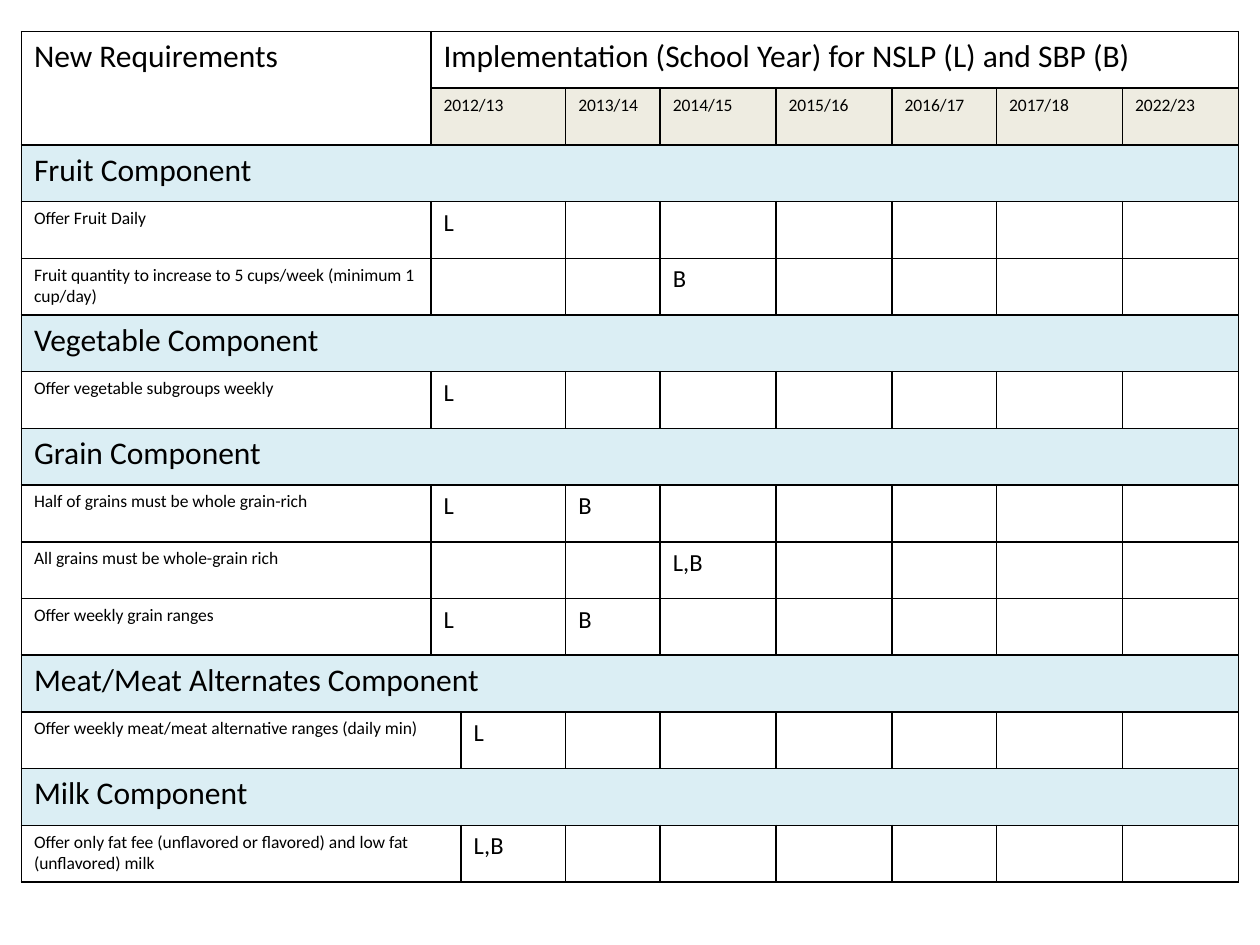
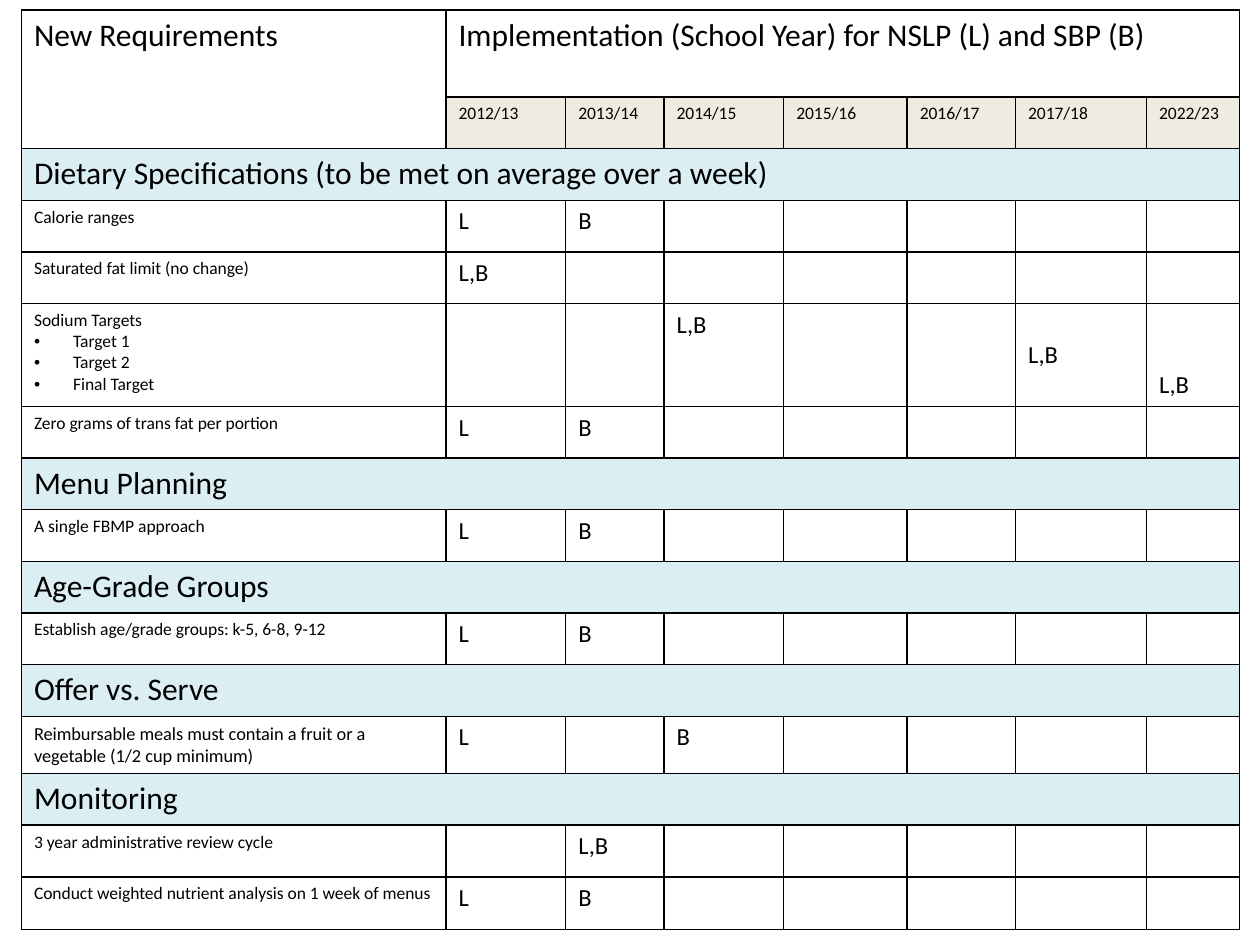
from dataclasses import dataclass, field

from lxml.etree import SubElement
from pptx import Presentation
from pptx.dml.color import RGBColor
from pptx.oxml.ns import qn
from pptx.util import Inches, Pt


@dataclass(frozen=True)
class Theme:
    font: str = "Calibri"
    ink: str = "000000"
    paper: str = "FFFFFF"
    year_fill: str = "EEECE1"
    section_fill: str = "DBEEF4"
    heading_size: float = 18
    mark_size: float = 14
    body_size: float = 10
    wide_body_size: float = 10.5
    border_width: float = 1
    cell_margin: float = 0.05
    mark_line: float = 0.24
    bullet_indent: float = 0.31


@dataclass(frozen=True)
class Section:
    title: str
    height: float


@dataclass(frozen=True)
class Requirement:
    label: str
    height: float
    marks: dict
    targets: tuple = ()
    mark_lines: dict = field(default_factory=dict)
    size: float = Theme.body_size
    wide_label: bool = False


YEARS = ("2012/13", "2013/14", "2014/15", "2015/16", "2016/17", "2017/18", "2022/23")
LUNCH_FIRST = {"2012/13": "L"}
LUNCH_THEN_BREAKFAST = {"2012/13": "L", "2013/14": "B"}


def write_text(text_frame, text, *, size, theme, bulleted=False, added=False):
    paragraph = text_frame.add_paragraph() if added else text_frame.paragraphs[0]
    run = paragraph.add_run()
    run.text = text
    run.font.name = theme.font
    run.font.size = Pt(size)
    run.font.color.rgb = RGBColor.from_string(theme.ink)
    if bulleted:
        properties = paragraph._p.get_or_add_pPr()
        indent = Inches(theme.bullet_indent)
        properties.set("marL", str(indent))
        properties.set("indent", str(-indent))
        SubElement(properties, qn("a:buFont")).set("typeface", "Arial")
        SubElement(properties, qn("a:buChar")).set("char", "•")


class TimelineDeck:
    def __init__(self, theme):
        self.theme = theme
        self.presentation = Presentation()
        self.presentation.slide_width = Inches(10)
        self.presentation.slide_height = Inches(7.5)
        self.slide = None
        self.table = None

    def add_slide(self):
        self.slide = self.presentation.slides.add_slide(self.presentation.slide_layouts[6])
        background = self.slide.background.fill
        background.solid()
        background.fore_color.rgb = RGBColor.from_string(self.theme.paper)

    def add_grid(self, left, top, widths, heights):
        shape = self.slide.shapes.add_table(
            len(heights), len(widths), Inches(left), Inches(top),
            Inches(sum(widths)), Inches(sum(heights)))
        self.table = shape.table
        self.table.first_row = False
        self.table.horz_banding = False
        for column, width in zip(self.table.columns, widths):
            column.width = Inches(width)
        for row, height in zip(self.table.rows, heights):
            row.height = Inches(height)
        for cell in self.table.iter_cells():
            self.add_borders(cell)
            cell.fill.background()

    def add_borders(self, cell):
        properties = cell._tc.get_or_add_tcPr()
        for side in ("lnL", "lnR", "lnT", "lnB"):
            line = SubElement(properties, qn(f"a:{side}"), w=str(Pt(self.theme.border_width)))
            fill = SubElement(line, qn("a:solidFill"))
            SubElement(fill, qn("a:srgbClr"), val=self.theme.ink)

    def fill_cell(self, row, column, text="", *, size, fill=None, until=None, line=0):
        cell = self.table.cell(row, column)
        if until and until != (row, column):
            cell.merge(self.table.cell(*until))
        if fill:
            cell.fill.solid()
            cell.fill.fore_color.rgb = RGBColor.from_string(fill)
        if line:
            cell.margin_top = Inches(self.theme.cell_margin + line * self.theme.mark_line)
        if text:
            write_text(cell.text_frame, text, size=size, theme=self.theme)
        return cell

    def add_header(self, last_column, first_year, year_columns):
        theme = self.theme
        self.fill_cell(0, 0, "New Requirements", size=theme.heading_size, until=(1, 0))
        self.fill_cell(0, 1, "Implementation (School Year) for NSLP (L) and SBP (B)",
                       size=theme.heading_size, until=(0, last_column))
        for year, column in year_columns.items():
            start = 1 if year == first_year else column
            self.fill_cell(1, start, year, size=theme.body_size,
                           fill=theme.year_fill, until=(1, column))

    def add_section(self, row, section, last_column):
        self.fill_cell(row, 0, section.title, size=self.theme.heading_size,
                       fill=self.theme.section_fill, until=(row, last_column))

    def add_requirement(self, row, requirement, first_year, year_columns):
        theme = self.theme
        first_column = year_columns[first_year]
        label_end = first_column - 1 if requirement.wide_label else 0
        label = self.fill_cell(row, 0, requirement.label, size=requirement.size,
                               until=(row, label_end))
        for target in requirement.targets:
            write_text(label.text_frame, target, size=requirement.size, theme=theme,
                       bulleted=True, added=True)
        for year, column in year_columns.items():
            start = label_end + 1 if year == first_year else column
            self.fill_cell(row, start, requirement.marks.get(year, ""), size=theme.mark_size,
                           until=(row, column), line=requirement.mark_lines.get(year, 0))

    def add_timeline(self, left, top, widths, header_heights, entries):
        self.add_slide()
        heights = [*header_heights, *(entry.height for entry in entries)]
        self.add_grid(left, top, widths, heights)
        last_column = len(widths) - 1
        first_year = YEARS[0]
        year_columns = dict(zip(YEARS, range(len(widths) - len(YEARS), len(widths))))
        self.add_header(last_column, first_year, year_columns)
        for row, entry in enumerate(entries, start=len(header_heights)):
            if isinstance(entry, Section):
                self.add_section(row, entry, last_column)
            else:
                self.add_requirement(row, entry, first_year, year_columns)

    def save(self):
        self.presentation.save("out.pptx")


def meal_components():
    height = 0.45
    return [
        Section("Fruit Component", height),
        Requirement("Offer Fruit Daily", height, LUNCH_FIRST),
        Requirement("Fruit quantity to increase to 5 cups/week (minimum 1 cup/day)",
                    height, {"2014/15": "B"}),
        Section("Vegetable Component", height),
        Requirement("Offer vegetable subgroups weekly", height, LUNCH_FIRST),
        Section("Grain Component", height),
        Requirement("Half of grains must be whole grain-rich", height, LUNCH_THEN_BREAKFAST),
        Requirement("All grains must be whole-grain rich", height, {"2014/15": "L,B"}),
        Requirement("Offer weekly grain ranges", height, LUNCH_THEN_BREAKFAST),
        Section("Meat/Meat Alternates Component", height),
        Requirement("Offer weekly meat/meat alternative ranges (daily min)",
                    height, LUNCH_FIRST, wide_label=True),
        Section("Milk Component", height),
        Requirement("Offer only fat fee (unflavored or flavored) and low fat (unflavored) milk",
                    height, {"2012/13": "L,B"}, wide_label=True),
    ]


def program_rules():
    height = 0.41
    return [
        Section("Dietary Specifications (to be met on average over a week)", height),
        Requirement("Calorie ranges", height, LUNCH_THEN_BREAKFAST),
        Requirement("Saturated fat limit (no change)", height, {"2012/13": "L,B"}),
        Requirement("Sodium Targets", 0.79,
                    dict.fromkeys(("2014/15", "2017/18", "2022/23"), "L,B"),
                    targets=("Target 1", "Target 2", "Final Target"),
                    mark_lines={"2017/18": 1, "2022/23": 2}),
        Requirement("Zero grams of trans fat per portion", height, LUNCH_THEN_BREAKFAST),
        Section("Menu Planning", height),
        Requirement("A single FBMP approach", height, LUNCH_THEN_BREAKFAST),
        Section("Age-Grade Groups", height),
        Requirement("Establish age/grade groups: k-5, 6-8, 9-12", height, LUNCH_THEN_BREAKFAST),
        Section("Offer vs. Serve", height),
        Requirement("Reimbursable meals must contain a fruit or a vegetable (1/2 cup minimum)",
                    0.44, {"2012/13": "L", "2014/15": "B"}, size=Theme.wide_body_size),
        Section("Monitoring", height),
        Requirement("3 year administrative review cycle", height, {"2013/14": "L,B"}),
        Requirement("Conduct weighted nutrient analysis on 1 week of menus",
                    0.42, LUNCH_THEN_BREAKFAST),
    ]


def main():
    deck = TimelineDeck(Theme())
    deck.add_timeline(0.17, 0.25, (3.25, 0.13, 0.83, 0.75, 0.92, 0.92, 0.83, 1, 0.92),
                      (0.45, 0.45), meal_components())
    deck.add_timeline(0.17, 0.08, (3.37, 0.95, 0.78, 0.95, 0.98, 0.86, 1.04, 0.74),
                      (0.69, 0.41), program_rules())
    deck.save()


if __name__ == "__main__":
    main()
